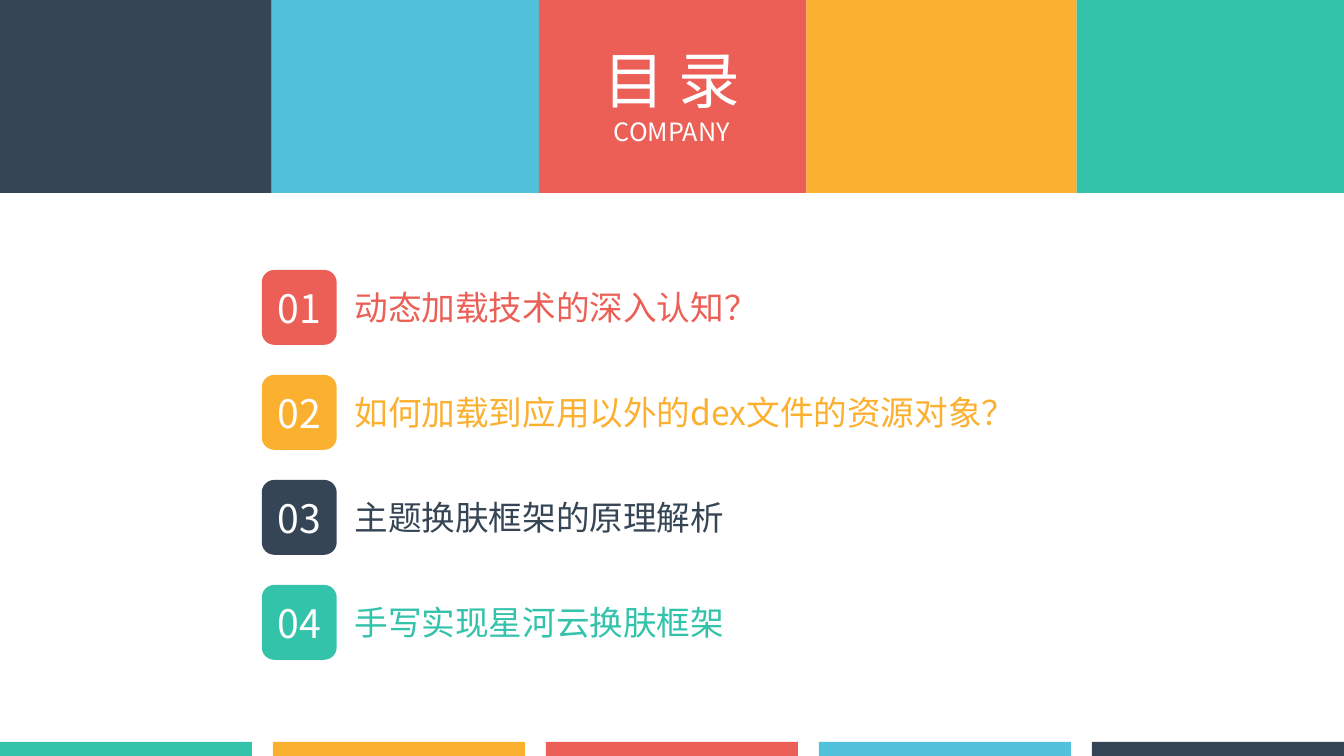
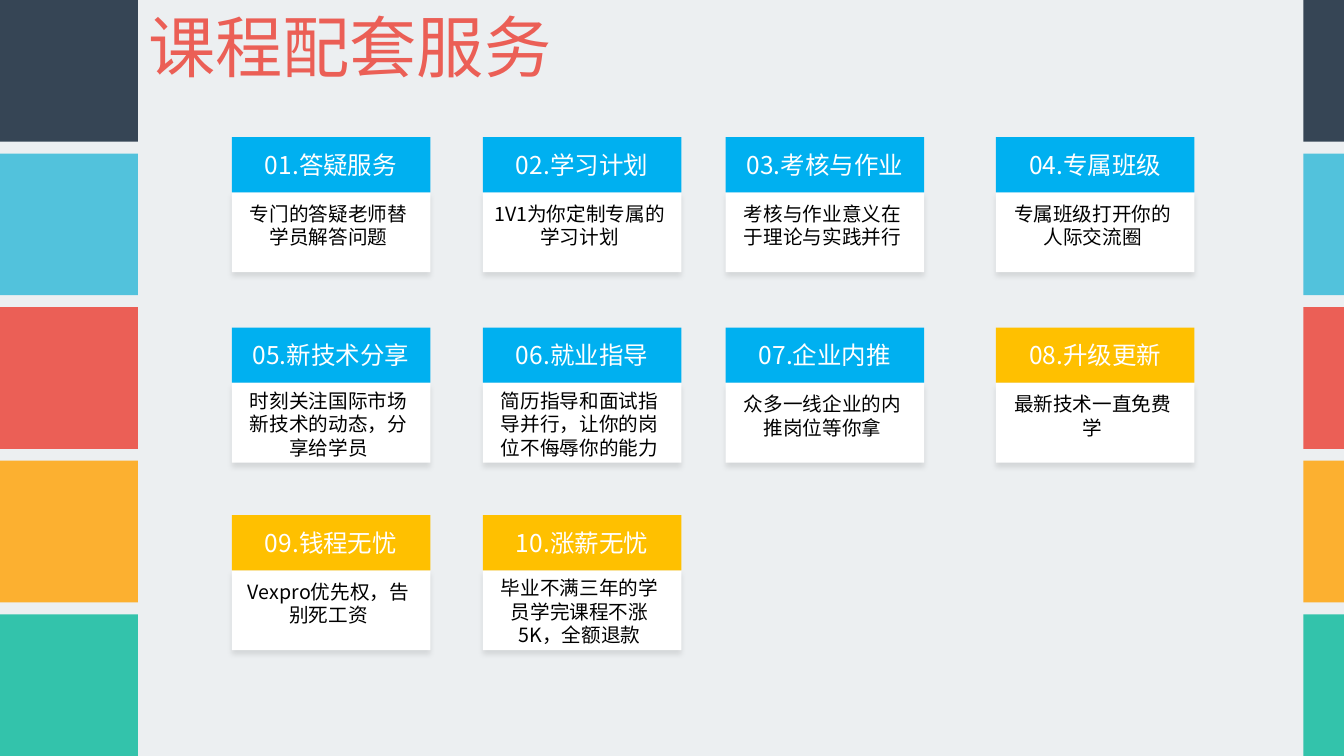
from lxml.etree import SubElement
from pptx import Presentation
from pptx.dml.color import RGBColor
from pptx.enum.shapes import MSO_SHAPE
from pptx.enum.text import MSO_ANCHOR, MSO_AUTO_SIZE, PP_ALIGN
from pptx.oxml.ns import qn
from pptx.util import Pt

FONT = "Noto Sans CJK SC"
COLORS = {
    "navy": "364555", "sky": "52C2DC", "red": "EB5F56", "amber": "FCB030",
    "teal": "33C3AB", "blue": "00B0F0", "gold": "FFC000",
    "white": "FFFFFF", "black": "000000", "mist": "ECEFF1",
}
BAND_COLORS = ["navy", "sky", "red", "amber", "teal"]

AGENDA_TITLE = [("目 录", 44), ("COMPANY", 18)]
# Topic, colour, text width
AGENDA = [
    ("动态加载技术的深入认知？", "red", 314),
    ("如何加载到应用以外的dex文件的资源对象？", "amber", 519),
    ("主题换肤框架的原理解析", "navy", 437),
    ("手写实现星河云换肤框架", "teal", 374),
]
SERVICES_TITLE = [("课程配套服务", 48)]
SERVICES = [
    ("答疑服务", "专门的答疑老师替学员解答问题", "blue"),
    ("学习计划", "1V1为你定制专属的学习计划", "blue"),
    ("考核与作业", "考核与作业意义在于理论与实践并行", "blue"),
    ("专属班级", "专属班级打开你的人际交流圈", "blue"),
    ("新技术分享", "时刻关注国际市场新技术的动态，分享给学员", "blue"),
    ("就业指导", "简历指导和面试指导并行，让你的岗位不侮辱你的能力", "blue"),
    ("企业内推", "众多一线企业的内推岗位等你拿", "blue"),
    ("升级更新", "最新技术一直免费学", "gold"),
    ("钱程无忧", "Vexpro优先权，告别死工资", "gold"),
    ("涨薪无忧", "毕业不满三年的学员学完课程不涨5K，全额退款", "gold"),
]

SLIDE_W, SLIDE_H = 960, 540
TOP_EDGES = [0, 194, 385, 576, 769, SLIDE_W]
TOP_H = 137.8
FOOTER_W, FOOTER_H = 180, 10
SIDE_H = 101.2
BADGE_X, BADGE_Y, BADGE, AGENDA_PITCH = 187, 192.8, 53.5, 75
CARD_LEFTS = [165.6, 344.9, 518.4, 711.4]
CARD_TOPS = [98, 234, 368]
CARD_W, HEADER_H, BODY_H = 141.8, 39.4, 57
TWO_LINE_CHARS = 18

FRAME_FORMATS = {
    "label": {"word_wrap": True, "vertical_anchor": MSO_ANCHOR.MIDDLE},
    "text": {"word_wrap": True, "vertical_anchor": MSO_ANCHOR.TOP,
             "auto_size": MSO_AUTO_SIZE.SHAPE_TO_FIT_TEXT},
    "title": {"word_wrap": False, "vertical_anchor": MSO_ANCHOR.TOP,
              "auto_size": MSO_AUTO_SIZE.SHAPE_TO_FIT_TEXT},
}


def rgb(color):
    return RGBColor.from_string(COLORS[color])


def write(frame, lines, color, kind, align=PP_ALIGN.CENTER):
    """Fill a text frame with (text, size) paragraphs."""
    for name, value in FRAME_FORMATS[kind].items():
        setattr(frame, name, value)
    for index, (text, size) in enumerate(lines):
        paragraph = frame.add_paragraph() if index else frame.paragraphs[0]
        paragraph.alignment = align
        run = paragraph.add_run()
        run.text = text
        run.font.color.rgb = rgb(color)
        for name, value in {"size": Pt(size), "name": FONT}.items():
            setattr(run.font, name, value)
        SubElement(run.font._element, qn("a:ea"), typeface=FONT)


def add_block(shapes, box, color, preset=MSO_SHAPE.RECTANGLE):
    block = shapes.add_shape(preset, *map(Pt, box))
    block.shadow.inherit = False
    block.fill.solid()
    block.fill.fore_color.rgb = rgb(color)
    block.line.fill.background()
    return block


def add_text(shapes, box, text, size, color, align):
    textbox = shapes.add_textbox(*map(Pt, box))
    write(textbox.text_frame, [(text, size)], color, "text", align)


def add_soft_shadow(block):
    effects = block._element.spPr.find(qn("a:effectLst"))
    shadow = SubElement(effects, qn("a:outerShdw"), blurRad=str(Pt(4)),
                        dist=str(Pt(3)), dir="5400000", algn="t", rotWithShape="0")
    tint = SubElement(shadow, qn("a:srgbClr"), val=COLORS["black"])
    SubElement(tint, qn("a:alpha"), val="9000")


def add_slide(deck, background):
    slide = deck.slides.add_slide(deck.slide_layouts[5])
    slide.background.fill.solid()
    slide.background.fill.fore_color.rgb = rgb(background)
    return slide


def set_title(slide, box, lines, color, align):
    """Place the title placeholder in front of the bands."""
    title = slide.shapes.title
    for name, value in zip(("left", "top", "width", "height"), box):
        setattr(title, name, Pt(value))
    write(title.text_frame, lines, color, "title", align)
    title.element.getparent().append(title.element)


def build_agenda(deck):
    slide = add_slide(deck, "white")
    footer_pitch = (SLIDE_W - FOOTER_W) / 4
    for index, color in enumerate(BAND_COLORS):
        left, right = TOP_EDGES[index:index + 2]
        add_block(slide.shapes, (left, 0, right - left, TOP_H), color)
        add_block(slide.shapes, ((4 - index) * footer_pitch, SLIDE_H - FOOTER_H,
                                 FOOTER_W, FOOTER_H), color)
    set_title(slide, (421.2, 26.6, 117.4, 85), AGENDA_TITLE, "white", PP_ALIGN.CENTER)
    for index, (topic, color, width) in enumerate(AGENDA):
        top = BADGE_Y + index * AGENDA_PITCH
        entry = slide.shapes.add_group_shape().shapes
        badge = add_block(entry, (BADGE_X, top, BADGE, BADGE), color,
                          MSO_SHAPE.ROUNDED_RECTANGLE)
        write(badge.text_frame, [(f"{index + 1:02}", 28)], "white", "label")
        add_text(entry, (246.2, top + 8.4, width, 36), topic, 24, color, PP_ALIGN.LEFT)


def build_services(deck):
    slide = add_slide(deck, "mist")
    side_pitch = (SLIDE_H - SIDE_H) / 4
    for left, width in ((0, 98.6), (931, 29)):
        for index, color in enumerate(BAND_COLORS):
            add_block(slide.shapes, (left, index * side_pitch, width, SIDE_H), color)
    set_title(slide, (98.6, 0, 320, 65.5), SERVICES_TITLE, "red", PP_ALIGN.LEFT)
    for index, (service, detail, color) in enumerate(SERVICES):
        row, column = divmod(index, len(CARD_LEFTS))
        left, top = CARD_LEFTS[column], CARD_TOPS[row]
        body_top = top + HEADER_H
        add_soft_shadow(add_block(slide.shapes, (left, body_top, CARD_W, BODY_H), "white"))
        header = add_block(slide.shapes, (left, top, CARD_W, HEADER_H), color)
        write(header.text_frame, [(f"{index + 1:02}.{service}", 17.5)], "white", "label")
        inset, height = (3, 41) if len(detail) <= TWO_LINE_CHARS else (0.5, 58)
        add_text(slide.shapes, (left, body_top + inset, 138.2, height),
                 detail, 14, "black", PP_ALIGN.CENTER)


def main():
    deck = Presentation()
    deck.slide_width, deck.slide_height = Pt(SLIDE_W), Pt(SLIDE_H)
    build_agenda(deck)
    build_services(deck)
    deck.save("out.pptx")


if __name__ == "__main__":
    main()
